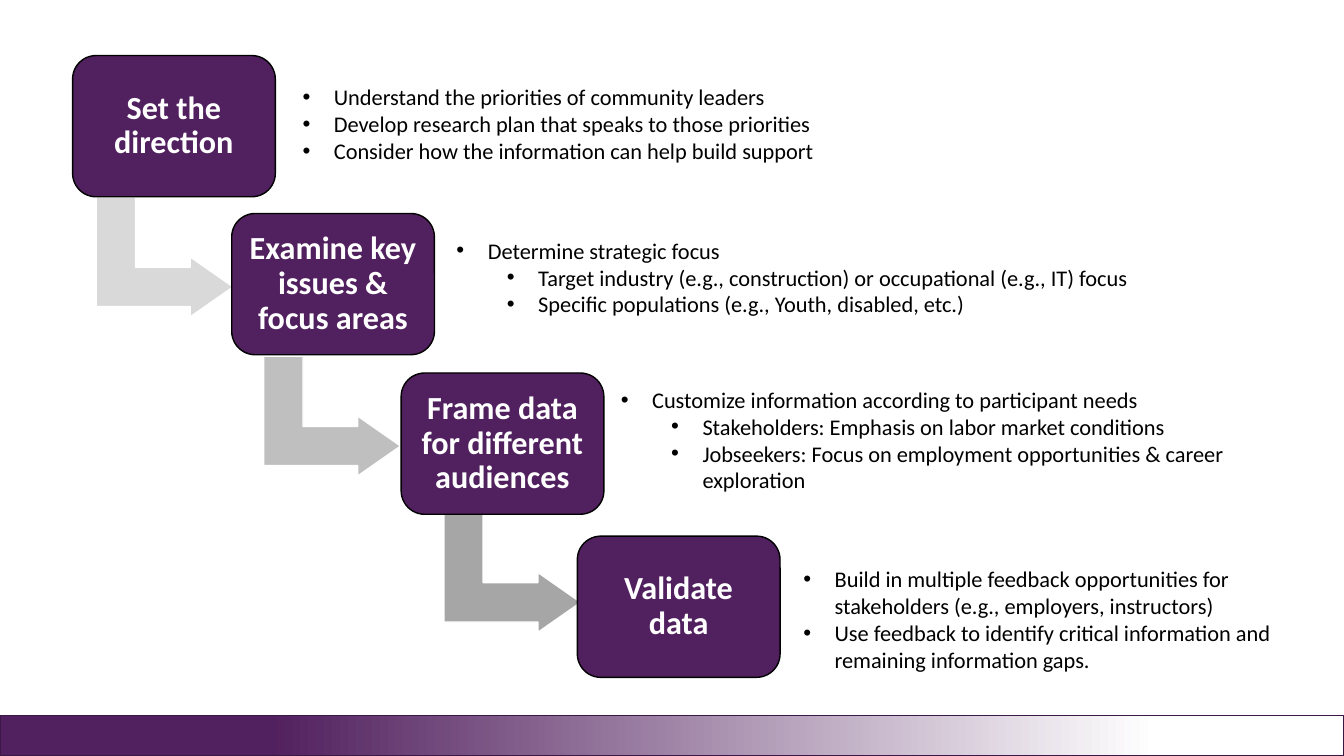
import pptx
import pptx.util
import pptx.dml.color
import pptx.enum.shapes
import pptx.enum.text
import lxml.etree

Cm, Pt = pptx.util.Cm, pptx.util.Pt
SHAPE = pptx.enum.shapes.MSO_SHAPE
ANCHOR = pptx.enum.text.MSO_ANCHOR
ALIGN = pptx.enum.text.PP_ALIGN

# Content: heading, box (left, top), list (left, top, width, height), items (level, text)
STEPS = [
    ("Set the direction", (1.83, 1.4), (7.37, 1.98, 16.31, 2.31), [
        (0, "Understand the priorities of community leaders"),
        (0, "Develop research plan that speaks to those priorities"),
        (0, "Consider how the information can help build support")]),
    ("Examine key issues & focus areas", (5.84, 5.38), (11.25, 5.84, 21.16, 2.31), [
        (0, "Determine strategic focus"),
        (1, "Target industry (e.g., construction) or occupational (e.g., IT) focus"),
        (1, "Specific populations (e.g., Youth, disabled, etc.)")]),
    ("Frame data for different audiences", (10.11, 9.4), (15.39, 9.6, 17.02, 3), [
        (0, "Customize information according to participant needs"),
        (1, "Stakeholders: Emphasis on labor market conditions"),
        (1, "Jobseekers: Focus on employment opportunities & career exploration")]),
    ("Validate data", (14.55, 13.51), (19.99, 14.12, 12.4, 3), [
        (0, "Build in multiple feedback opportunities for stakeholders "
            "(e.g., employers, instructors)"),
        (0, "Use feedback to identify critical information and "
            "remaining information gaps.")]),
]
# Arrows: left, top, colour name
ARROWS = [(2.64, 4.75, "light"), (6.86, 8.76, "middle"), (11.4, 12.7, "dark")]
ARROW_ADJUSTMENTS = (0.328, 0.25, 0.358)
COLORS = {"purple": "51205E", "edge": "3C1846", "white": "FFFFFF", "black": "000000",
          "light": "D9D9D9", "middle": "BFBFBF", "dark": "A6A6A6"}
FONT = "Calibri"
BOX_W, BOX_H = 5.11, 3.56
ARROW_W, ARROW_H = 3.02, 3.45
SLIDE_W, SLIDE_H, BAR_H = 33.87, 19.05, 1.02


def rgb(name):
    return pptx.dml.color.RGBColor.from_string(COLORS[name])


def add_shape(kind, left, top, width, height, line):
    sp = s.shapes.add_shape(kind, Cm(left), Cm(top), Cm(width), Cm(height))
    sp.shadow.inherit = False
    sp.line.color.rgb = rgb(line)
    sp.line.width = Pt(1)
    return sp


def format_text(p, size, color, bold):
    for r in p.runs:
        r.font.name, r.font.size, r.font.bold = FONT, Pt(size), bold
        r.font.color.rgb = rgb(color)


def add_bullet(p):
    pPr = p._p.get_or_add_pPr()
    pPr.set("marL", str(Cm(0.79 + 1.27 * p.level)))
    pPr.set("indent", str(-Cm(0.79)))
    ns = pptx.oxml.ns.qn
    lxml.etree.SubElement(pPr, ns("a:buFont")).set("typeface", "Arial")
    lxml.etree.SubElement(pPr, ns("a:buChar")).set("char", "•")


prs = pptx.Presentation()
prs.slide_width, prs.slide_height = Cm(SLIDE_W), Cm(SLIDE_H)
s = prs.slides.add_slide(prs.slide_layouts.get_by_name("Comparison"))

# The slide has no title; the four body placeholders hold the lists
title = s.shapes.title._element
title.getparent().remove(title)
bodies = list(s.placeholders)

# Arrows, behind the boxes
for left, top, color in ARROWS:
    sp = add_shape(SHAPE.BENT_UP_ARROW, left, top, ARROW_W, ARROW_H, "white")
    sp.rotation = 90
    for i, value in enumerate(ARROW_ADJUSTMENTS):
        sp.adjustments[i] = value
    sp.fill.solid()
    sp.fill.fore_color.rgb = rgb(color)

# Step boxes and their lists
for body, (heading, box, place, items) in zip(bodies, STEPS):
    sp = add_shape(SHAPE.ROUNDED_RECTANGLE, *box, BOX_W, BOX_H, "black")
    sp.fill.solid()
    sp.fill.fore_color.rgb = rgb("purple")
    tf = sp.text_frame
    tf.text = heading
    tf.word_wrap = True
    tf.vertical_anchor = ANCHOR.MIDDLE
    # The rounded corners already inset the text
    tf.margin_left = tf.margin_right = tf.margin_top = tf.margin_bottom = Cm(0.22)
    p = tf.paragraphs[0]
    p.alignment, p.line_spacing = ALIGN.CENTER, 0.9
    format_text(p, 23, "white", True)

    body.left, body.top, body.width, body.height = map(Cm, place)
    tf = body.text_frame
    tf.text = "\n".join(text for level, text in items)
    tf.word_wrap = True
    tf.auto_size = pptx.enum.text.MSO_AUTO_SIZE.NONE
    tf.vertical_anchor = ANCHOR.TOP
    for p, (level, text) in zip(tf.paragraphs, items):
        p.level = level
        p.space_before = Pt(0)
        add_bullet(p)
        format_text(p, 16, "black", False)

# Gradient bar along the bottom
bar = add_shape(SHAPE.RECTANGLE, 0, SLIDE_H - BAR_H, SLIDE_W, BAR_H, "edge")
bar.fill.gradient()
bar.fill.gradient_angle = 0
for stop, (position, color) in zip(bar.fill.gradient_stops,
                                   [(0.2, "purple"), (0.86, "white")]):
    stop.position = position
    stop.color.rgb = rgb(color)

prs.save("out.pptx")
